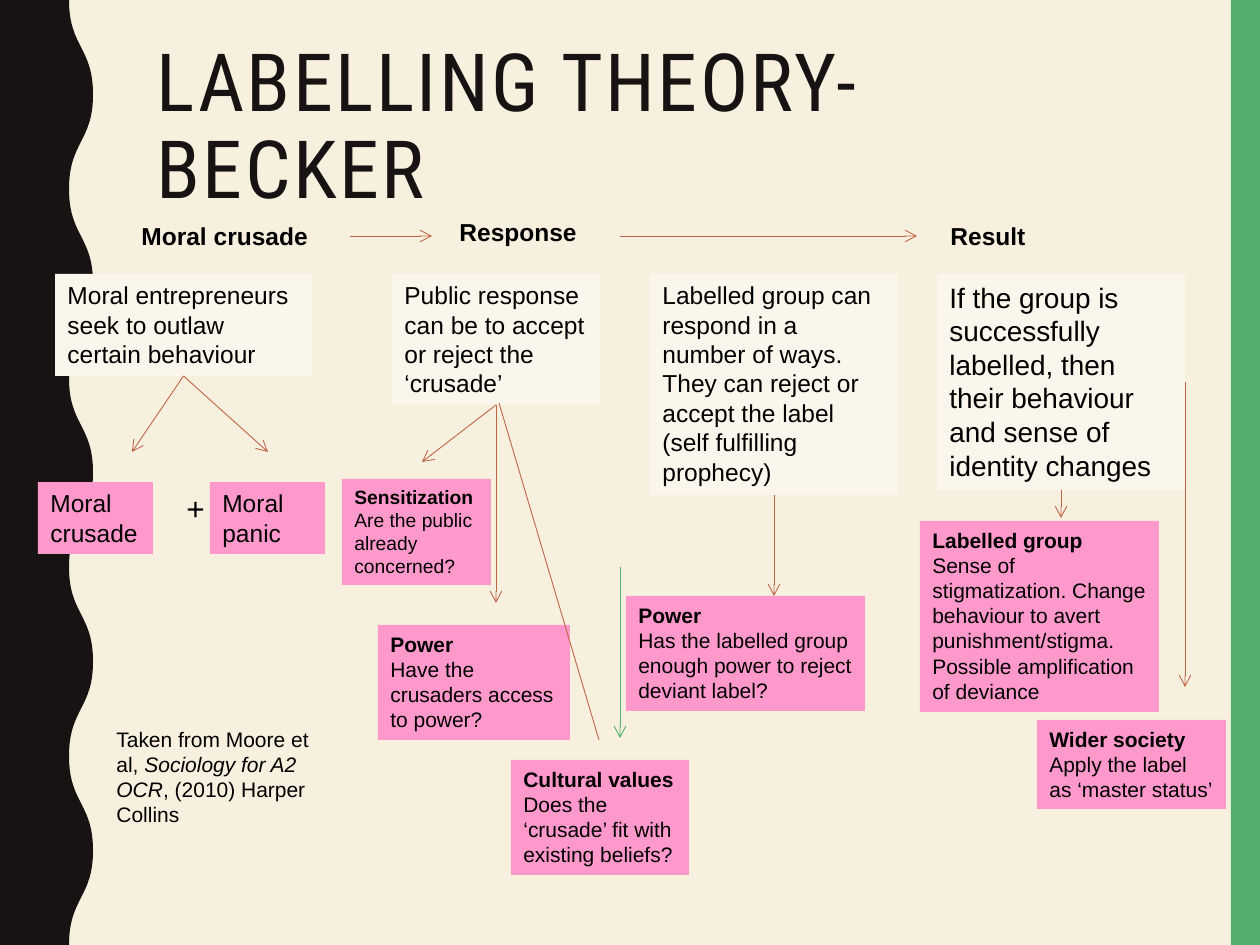
from lxml.etree import SubElement
from pptx import Presentation
from pptx.dml.color import RGBColor
from pptx.enum.shapes import MSO_CONNECTOR, MSO_SHAPE
from pptx.enum.text import MSO_ANCHOR, MSO_AUTO_SIZE, PP_ALIGN
from pptx.oxml.ns import qn
from pptx.util import Pt

PX = 914400 / 126
W, H = 1260, 945
COLORS = {"paper": "F7F0DF", "ink": "171312", "green": "53AE6E", "card": "FAF6EC",
          "pink": "FF99CC", "rust": "BF6546", "text": "000000"}

# Content: name: (x, y, w, h, size, text)
TITLE = "LABELLING THEORY- BECKER"
STAGES = {
    "crusade": (55, 274, 257, 102, 14, "Moral entrepreneurs seek to outlaw certain behaviour"),
    "response": (392, 274, 208, 131, 14,
                 "Public response can be to accept or reject the ‘crusade’"),
    "reaction": (650, 274, 248, 221, 14,
                 "Labelled group can respond in a number of ways. They can reject "
                 "or accept the label (self fulfilling prophecy)"),
    "result": (937, 274, 248, 216, 16,
               "If the group is successfully labelled, then their behaviour and "
               "sense of identity changes"),
}
# x, y, w, h, size, bold heading, text
FACTORS = [
    (38, 482, 115, 72, 14, "", "Moral crusade"),
    (210, 482, 115, 72, 14, "", "Moral panic"),
    (342, 479, 149, 106, 11, "Sensitization", "Are the public already concerned?"),
    (378, 625, 192, 115, 12, "Power", "Have the crusaders access to power?"),
    (511, 760, 178, 115, 12, "Cultural values",
     "Does the ‘crusade’ fit with existing beliefs?"),
    (626, 596, 239, 115, 12, "Power",
     "Has the labelled group enough power to reject deviant label?"),
    (920, 521, 239, 191, 12, "Labelled group",
     "Sense of stigmatization. Change behaviour to avert punishment/stigma. "
     "Possible amplification of deviance"),
    (1037, 720, 189, 89, 12, "Wider society", "Apply the label as ‘master status’"),
]
HEADINGS = [(129, 215, "Moral crusade"), (447, 211, "Response"), (938, 215, "Result")]
SOURCE = [("Taken from Moore et al, ", False), ("Sociology for A2 OCR", True),
          (", (2010) Harper Collins", False)]
# Start is a point, or (stage, side) where the line is joined to a box
ARROWS = [
    (("crusade", 2), (132, 452)), (("crusade", 2), (268, 452)),
    (("response", 2), (422, 462)), (("response", 2), (496, 603)),
    (("reaction", 2), (774, 596)), (("result", 2), (1061, 518)),
    (("result", 3), (1185, 687)),
    ((350, 236), (432, 236)), ((620, 236), (917, 236)),
]
GREEN_ARROW = ((620, 567), (620, 738))
PLAIN_LINE = ((499, 403), (599, 740))


def px(*values):
    return [round(v * PX) for v in values]


def rgb(name):
    return RGBColor.from_string(COLORS[name])


def paint(sp, color):
    sp.shadow.inherit = False
    sp.fill.solid()
    sp.fill.fore_color.rgb = rgb(color)
    sp.line.fill.background()


def write(sp, size, paragraphs):
    """Each paragraph is (text, bold)."""
    tf = sp.text_frame
    tf.word_wrap = True
    tf.auto_size = MSO_AUTO_SIZE.SHAPE_TO_FIT_TEXT
    tf.vertical_anchor = MSO_ANCHOR.TOP
    for i, (text, bold) in enumerate(paragraphs):
        p = tf.add_paragraph() if i else tf.paragraphs[0]
        p.text = text
        p.alignment = PP_ALIGN.LEFT
        p.font.name, p.font.size, p.font.bold = "Arial", Pt(size), bold
        p.font.color.rgb = rgb("text")
    return tf


def add_box(box, color, size, paragraphs):
    sp = shapes.add_shape(MSO_SHAPE.RECTANGLE, *px(*box))
    paint(sp, color)
    write(sp, size, paragraphs)
    return sp


def add_label(box, size, text, bold=False):
    return write(shapes.add_textbox(*px(*box)), size, [(text, bold)])


def add_line(start, end, color="rust", arrow=True):
    joined = start[0] in stages
    first = end if joined else start
    line = shapes.add_connector(MSO_CONNECTOR.STRAIGHT, *px(*first, *end))
    if joined:
        line.begin_connect(stages[start[0]], start[1])
    line.line.color.rgb = rgb(color)
    line.line.width = Pt(0.5)
    if arrow:
        SubElement(line.line._get_or_add_ln(), qn("a:tailEnd"), type="arrow")
    SubElement(line._element.spPr, qn("a:effectLst"))


def add_segment(outline, kind, *points):
    segment = SubElement(outline, qn(kind))
    for point in points:
        x, y = px(*point)
        SubElement(segment, qn("a:pt"), x=str(x), y=str(y))


def add_wave(trough, crest, count):
    """Fill from the left edge to a wavy line of count half waves."""
    builder = shapes.build_freeform(0, 0)
    builder.add_line_segments([px(crest, 0), px(crest, H), px(0, H)])
    sp = builder.convert_to_shape()
    outline = sp._element.find(".//" + qn("a:path"))
    for segment in list(outline)[1:]:
        outline.remove(segment)
    add_segment(outline, "a:lnTo", (trough, 0))
    step = H / count
    for i in range(count):
        x1, x2 = (crest, trough) if i % 2 else (trough, crest)
        middle = (i + 0.5) * step
        add_segment(outline, "a:cubicBezTo", (x1, middle), (x2, middle),
                    (x2, (i + 1) * step))
    add_segment(outline, "a:lnTo", (0, H))
    SubElement(outline, qn("a:close"))
    paint(sp, "ink")


prs = Presentation()
prs.slide_width, prs.slide_height = px(W, H)
s = prs.slides.add_slide(prs.slide_layouts[5])
shapes = s.shapes
s.background.fill.solid()
s.background.fill.fore_color.rgb = rgb("paper")

# Right bar and wavy left edge
paint(shapes.add_shape(MSO_SHAPE.RECTANGLE, *px(1231, 0, W - 1231, H)), "green")
add_wave(69, 93, 10)

# Title
title = shapes.title
title.left, title.top, title.width, title.height = px(144, 36, 968, 157)
tf = title.text_frame
tf.word_wrap = True
tf.auto_size = MSO_AUTO_SIZE.NONE
tf.vertical_anchor = MSO_ANCHOR.TOP
p = tf.paragraphs[0]
r = p.add_run()
r.text = TITLE
p.alignment, p.line_spacing = PP_ALIGN.LEFT, 0.9
r.font.name, r.font.size = "Roboto Condensed", Pt(45.9)
r.font.color.rgb = rgb("ink")
r.font._element.set("spc", "150")

# Stage cards and factor boxes
stages = {name: add_box(box, "card", size, [(text, False)])
          for name, (*box, size, text) in STAGES.items()}
for *box, size, heading, text in FACTORS:
    paragraphs = [(heading, True)] if heading else []
    add_box(box, "pink", size, paragraphs + [(text, False)])

# Arrows
for start, end in ARROWS:
    add_line(start, end)
add_line(*GREEN_ARROW, color="green")
add_line(*PLAIN_LINE, arrow=False)

# Column headings, plus sign and source
for x, y, text in HEADINGS:
    add_label((x, y, 222, 43), 14, text, bold=True)
add_label((174, 483, 49, 50), 18, "+")
p = add_label((104, 720, 222, 115), 12, "").paragraphs[0]
for text, italic in SOURCE:
    r = p.add_run()
    r.text, r.font.italic = text, italic

prs.save("out.pptx")
